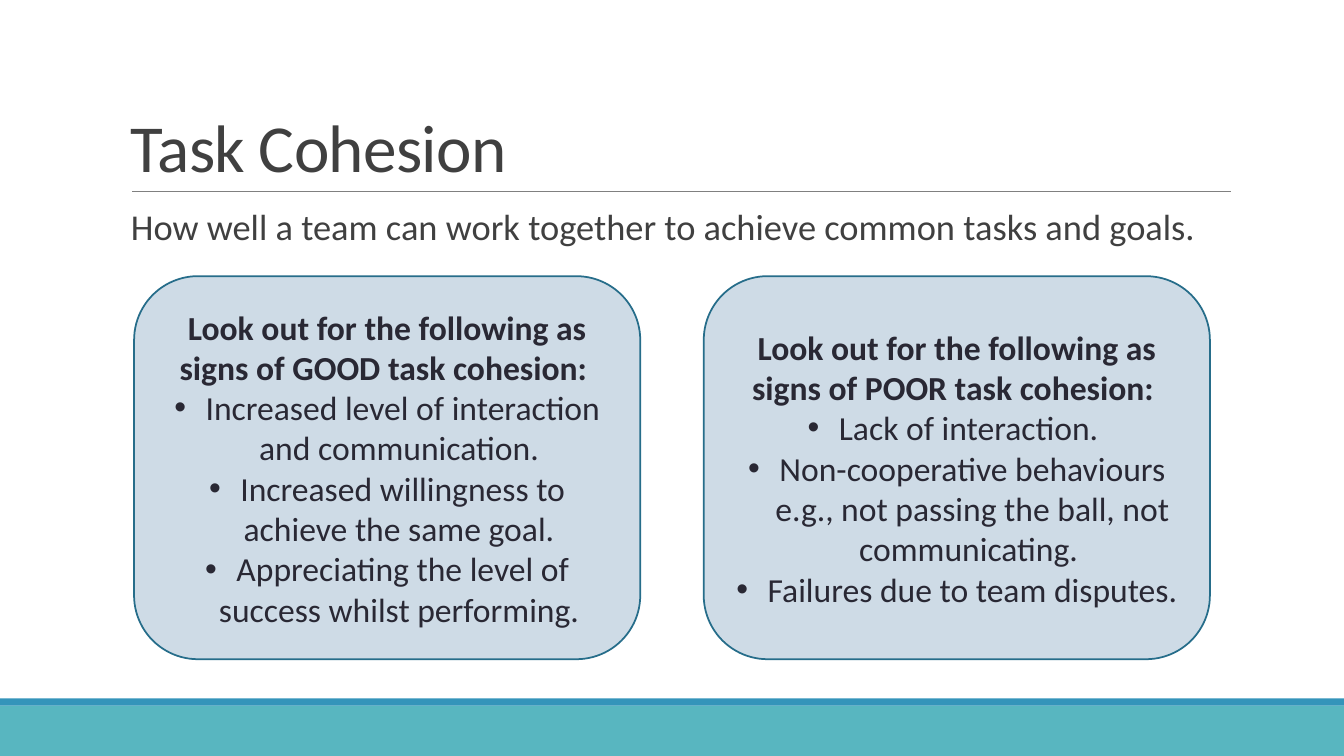
from dataclasses import dataclass

from lxml.etree import SubElement
from pptx import Presentation
from pptx.dml.color import RGBColor as RGB
from pptx.enum.shapes import MSO_CONNECTOR as CONNECTOR, MSO_SHAPE as SHAPE
from pptx.enum.text import MSO_ANCHOR as ANCHOR, PP_ALIGN as ALIGN
from pptx.oxml.ns import qn
from pptx.util import Inches, Pt

# Content
TITLE = "Task Cohesion"
DEFINITION = "How well a team can work\u00a0together to achieve common tasks and goals."
SIGN_CARDS = [
    ("Look out for the following as signs of GOOD task cohesion: ", [
        "Increased level of interaction and communication. ",
        "Increased willingness to achieve the same goal. ",
        "Appreciating the level of success whilst performing. ",
    ]),
    ("Look out for the following as signs of POOR task cohesion: ", [
        "Lack of interaction. ",
        "Non-cooperative behaviours e.g., not passing the ball, not communicating.\u00a0",
        "Failures due to team disputes.",
    ]),
]


@dataclass(frozen=True)
class Theme:
    font: str = "Calibri"
    heading: RGB = RGB.from_string("404040")
    card_text: RGB = RGB.from_string("292834")
    card_fill: RGB = RGB.from_string("CEDBE6")
    card_line: RGB = RGB.from_string("266D8A")
    rule: RGB = RGB.from_string("808080")
    footer: RGB = RGB.from_string("58B6C0")
    footer_edge: RGB = RGB.from_string("3494BA")
    title_size: int = 48
    definition_size: int = 26
    card_size: int = 24


THEME = Theme()

# Layout in inches
SLIDE_W, SLIDE_H = 13.33, 7.5
FOOTER_TOP, EDGE_H = 7, 0.07
TEXT_LEFT, TEXT_W = 1.2, 11
CARD_LEFT, CARD_TOP, CARD_W, CARD_H = 1.33, 2.74, 5.02, 3.8
CARD_STEP = 5.65
BULLET_INDENT = 0.31


def style(paragraph, size, color, bold=False):
    font = paragraph.font
    font.name, font.size, font.bold = THEME.font, Pt(size), bold
    font.color.rgb = color


def add_block(slide, kind, left, top, width, height, fill):
    block = slide.shapes.add_shape(
        kind, Inches(left), Inches(top), Inches(width), Inches(height))
    block.shadow.inherit = False
    block.fill.solid()
    block.fill.fore_color.rgb = fill
    block.line.fill.background()
    return block


def add_heading(slide, text, top, height, size, spacing, anchor):
    box = slide.shapes.add_textbox(
        Inches(TEXT_LEFT), Inches(top), Inches(TEXT_W), Inches(height))
    frame = box.text_frame
    frame.word_wrap = True
    frame.vertical_anchor = anchor
    paragraph = frame.paragraphs[0]
    paragraph.text = text
    paragraph.line_spacing = spacing
    style(paragraph, size, THEME.heading)
    return paragraph


def add_bullet(paragraph):
    properties = paragraph._p.get_or_add_pPr()
    properties.set("marL", str(Inches(BULLET_INDENT)))
    properties.set("indent", str(-Inches(BULLET_INDENT)))
    bullet_font = SubElement(properties, qn("a:buFont"))
    bullet_font.set("typeface", "Arial")
    SubElement(properties, qn("a:buChar")).set("char", "•")


def add_card(slide, left, lead, signs):
    card = add_block(slide, SHAPE.ROUNDED_RECTANGLE,
                     left, CARD_TOP, CARD_W, CARD_H, THEME.card_fill)
    card.line.color.rgb = THEME.card_line
    card.line.width = Pt(1.25)
    frame = card.text_frame
    frame.word_wrap = True
    frame.vertical_anchor = ANCHOR.MIDDLE
    for row, text in enumerate([lead, *signs]):
        paragraph = frame.add_paragraph() if row else frame.paragraphs[0]
        paragraph.text = text
        paragraph.alignment = ALIGN.CENTER
        if row:
            add_bullet(paragraph)
        style(paragraph, THEME.card_size, THEME.card_text, bold=row == 0)


def main():
    deck = Presentation()
    deck.slide_width, deck.slide_height = Inches(SLIDE_W), Inches(SLIDE_H)
    slide = deck.slides.add_slide(deck.slide_layouts[6])

    # Footer band and its edge
    add_block(slide, SHAPE.RECTANGLE, 0, FOOTER_TOP,
              SLIDE_W, SLIDE_H - FOOTER_TOP, THEME.footer)
    add_block(slide, SHAPE.RECTANGLE, 0, FOOTER_TOP - EDGE_H,
              SLIDE_W, EDGE_H, THEME.footer_edge)

    # Rule under the title
    rule = slide.shapes.add_connector(
        CONNECTOR.STRAIGHT, Inches(1.31), Inches(1.9), Inches(12.21), Inches(1.9))
    rule.line.color.rgb = THEME.rule
    rule.line.width = Pt(0.5)
    SubElement(rule._element.spPr, qn("a:effectLst"))

    # Title and definition
    title = add_heading(slide, TITLE, 0.31, 1.59, THEME.title_size, 0.85, ANCHOR.BOTTOM)
    title.runs[0]._r.get_or_add_rPr().set("spc", "-50")
    add_heading(slide, DEFINITION, 2.02, 0.62, THEME.definition_size, 0.9, ANCHOR.TOP)

    # Cards with the signs
    for column, (lead, signs) in enumerate(SIGN_CARDS):
        add_card(slide, CARD_LEFT + column * CARD_STEP, lead, signs)

    deck.save("out.pptx")


if __name__ == "__main__":
    main()
